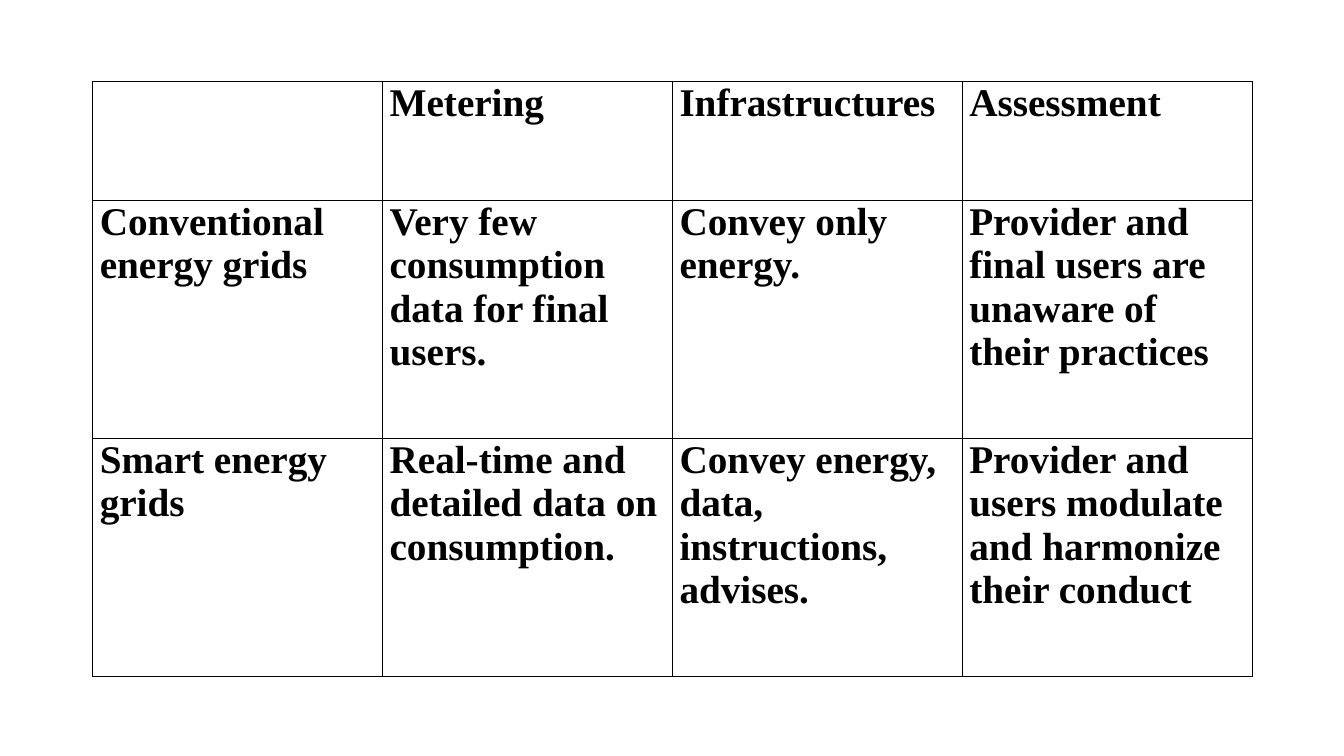
"""Build a slide with a table comparing conventional and smart energy grids."""
from lxml import etree
from pptx import Presentation
from pptx.dml.color import RGBColor
from pptx.oxml.ns import qn
from pptx.util import Inches, Pt

GRID_COMPARISON = [
    ["", "Metering", "Infrastructures", "Assessment"],
    ["Conventional energy grids",
     "Very few consumption data for final users.",
     "Convey only energy.",
     "Provider and final users are unaware of their practices"],
    ["Smart energy grids",
     "Real-time and detailed data on consumption.",
     "Convey energy, data, instructions, advises.",
     "Provider and users modulate and harmonize their conduct"],
]
LEFT, TOP, COLUMN_WIDTH = 0.92, 0.81, 2.875
ROW_HEIGHTS = [1.18, 2.36, 2.36]
BLACK = "000000"
BLANK_LAYOUT = 6


def color(value):
    return RGBColor.from_string(value)


def write(cell, text, font="Times New Roman", size=28, bold=True, ink=BLACK, before=6):
    cell.margin_left = cell.margin_right = Inches(0.07)
    cell.margin_top = cell.margin_bottom = 0
    paragraph = cell.text_frame.paragraphs[0]
    paragraph.text = text
    paragraph.space_before = Pt(before)
    paragraph.font.name = font
    paragraph.font.size = Pt(size)
    paragraph.font.bold = bold
    paragraph.font.color.rgb = color(ink)
    for run in paragraph.runs:
        run.font.name = font
        run.font.size = Pt(size)
        run.font.bold = bold
        run.font.color.rgb = color(ink)


def outline(cell, ink=BLACK, width=1):
    properties = cell._tc.get_or_add_tcPr()
    for position, side in enumerate(("a:lnL", "a:lnR", "a:lnT", "a:lnB")):
        border = etree.Element(qn(side), w=str(Pt(width)))
        fill = etree.SubElement(border, qn("a:solidFill"))
        etree.SubElement(fill, qn("a:srgbClr"), val=ink)
        properties.insert(position, border)


def main():
    presentation = Presentation()
    presentation.slide_width = Inches(13.33)
    presentation.slide_height = Inches(7.5)
    slide = presentation.slides.add_slide(presentation.slide_layouts[BLANK_LAYOUT])

    column_count = len(GRID_COMPARISON[0])
    comparison = slide.shapes.add_table(
        len(GRID_COMPARISON), column_count, Inches(LEFT), Inches(TOP),
        Inches(COLUMN_WIDTH * column_count), Inches(sum(ROW_HEIGHTS))).table
    comparison.first_row = comparison.horz_banding = False
    for column in comparison.columns:
        column.width = Inches(COLUMN_WIDTH)
    for row, height, entries in zip(comparison.rows, ROW_HEIGHTS, GRID_COMPARISON):
        row.height = Inches(height)
        for cell, entry in zip(row.cells, entries):
            cell.fill.background()
            outline(cell)
            write(cell, entry)

    presentation.save("out.pptx")


if __name__ == "__main__":
    main()
